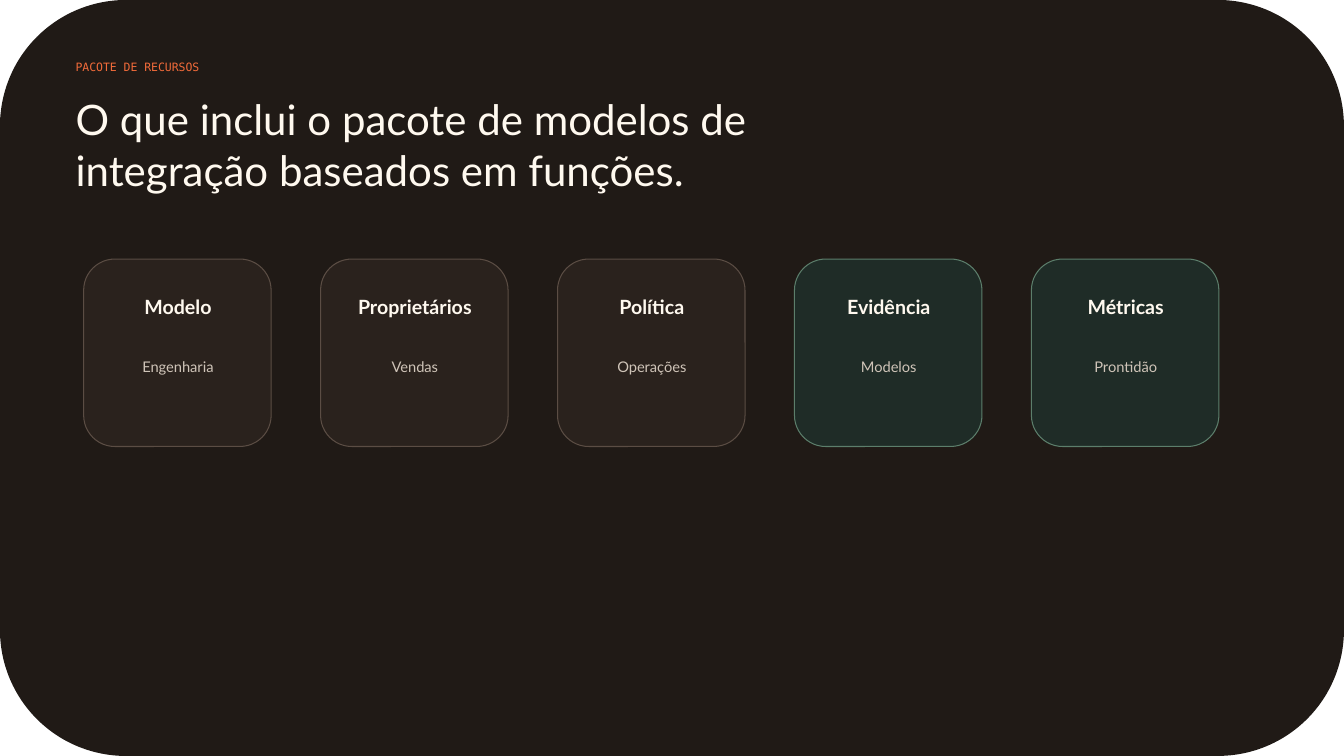
from dataclasses import dataclass

from pptx import Presentation
from pptx import util as u
from pptx.dml.color import RGBColor
from pptx.enum import shapes, text


@dataclass(frozen=True)
class Theme:
    backdrop: str = "201A16"
    accent: str = "F26B3A"
    cream: str = "FFF9EF"
    muted: str = "CFC4B8"
    brown: tuple = ("2A221D", "5B4D44")
    green: tuple = ("1F2C27", "5C7E6B")
    sans: str = "Lato"
    mono: str = "DejaVu Sans Mono"
    eyebrow_size: float = 8.2
    title_size: float = 30
    heading_size: float = 14
    detail_size: float = 10.5


THEME = Theme()
SLIDE_SIZE = (13.33, 7.5)
CARD_LEFT, CARD_TOP, CARD_SIDE, CARD_PITCH = 0.83, 2.57, 1.86, 2.35
CARDS = [
    ("Modelo", "Engenharia", THEME.brown),
    ("Proprietários", "Vendas", THEME.brown),
    ("Política", "Operações", THEME.brown),
    ("Evidência", "Modelos", THEME.green),
    ("Métricas", "Prontidão", THEME.green),
]


def write_text(holder, wording, *, size, color, font=THEME.sans, bold=False,
               align=text.PP_ALIGN.LEFT):
    frame = holder.text_frame
    frame.word_wrap = True
    frame.auto_size = text.MSO_AUTO_SIZE.NONE
    frame.vertical_anchor = text.MSO_ANCHOR.TOP
    frame.margin_left = frame.margin_right = 0
    frame.margin_top = frame.margin_bottom = 0
    paragraph = frame.paragraphs[0]
    paragraph.alignment = align
    run = paragraph.add_run()
    run.text = wording
    run.font.name = font
    run.font.size = u.Pt(size)
    run.font.bold = bold
    run.font.color.rgb = RGBColor.from_string(color)


def add_label(slide, box, wording, **style):
    label = slide.shapes.add_textbox(*map(u.Inches, box))
    write_text(label, wording, **style)


def add_panel(slide, box, fill, outline=None):
    panel = slide.shapes.add_shape(
        shapes.MSO_SHAPE.ROUNDED_RECTANGLE, *map(u.Inches, box))
    panel.shadow.inherit = False
    panel.fill.solid()
    panel.fill.fore_color.rgb = RGBColor.from_string(fill)
    if outline:
        panel.line.color.rgb = RGBColor.from_string(outline)
        panel.line.width = u.Pt(0.75)
    else:
        panel.line.fill.background()
    return panel


def add_backdrop(slide):
    backdrop = add_panel(slide, (0, 0, *SLIDE_SIZE), THEME.backdrop)
    slide.shapes.title.element.addprevious(backdrop.element)


def set_title(slide, box, wording):
    title = slide.shapes.title
    title.left, title.top, title.width, title.height = map(u.Inches, box)
    write_text(title, wording, size=THEME.title_size, color=THEME.cream)


def add_card(slide, left, heading, detail, palette):
    add_panel(slide, (left, CARD_TOP, CARD_SIDE, CARD_SIDE), *palette)
    centered = text.PP_ALIGN.CENTER
    add_label(slide, (left + 0.19, CARD_TOP + 0.36, 1.49, 0.33), heading,
              size=THEME.heading_size, color=THEME.cream, bold=True, align=centered)
    add_label(slide, (left + 0.16, CARD_TOP + 0.98, 1.55, 0.57), detail,
              size=THEME.detail_size, color=THEME.muted, align=centered)


def main():
    deck = Presentation()
    deck.slide_width, deck.slide_height = map(u.Inches, SLIDE_SIZE)
    slide = deck.slides.add_slide(deck.slide_layouts.get_by_name("Title Only"))
    add_backdrop(slide)
    add_label(slide, (0.75, 0.6, 4.59, 0.28), "PACOTE DE RECURSOS",
              size=THEME.eyebrow_size, color=THEME.accent, font=THEME.mono)
    set_title(slide, (0.75, 0.93, 8.31, 0.71),
              "O que inclui o pacote de modelos de integração baseados em funções.")
    for index, card in enumerate(CARDS):
        add_card(slide, CARD_LEFT + index * CARD_PITCH, *card)
    deck.save("out.pptx")


if __name__ == "__main__":
    main()
